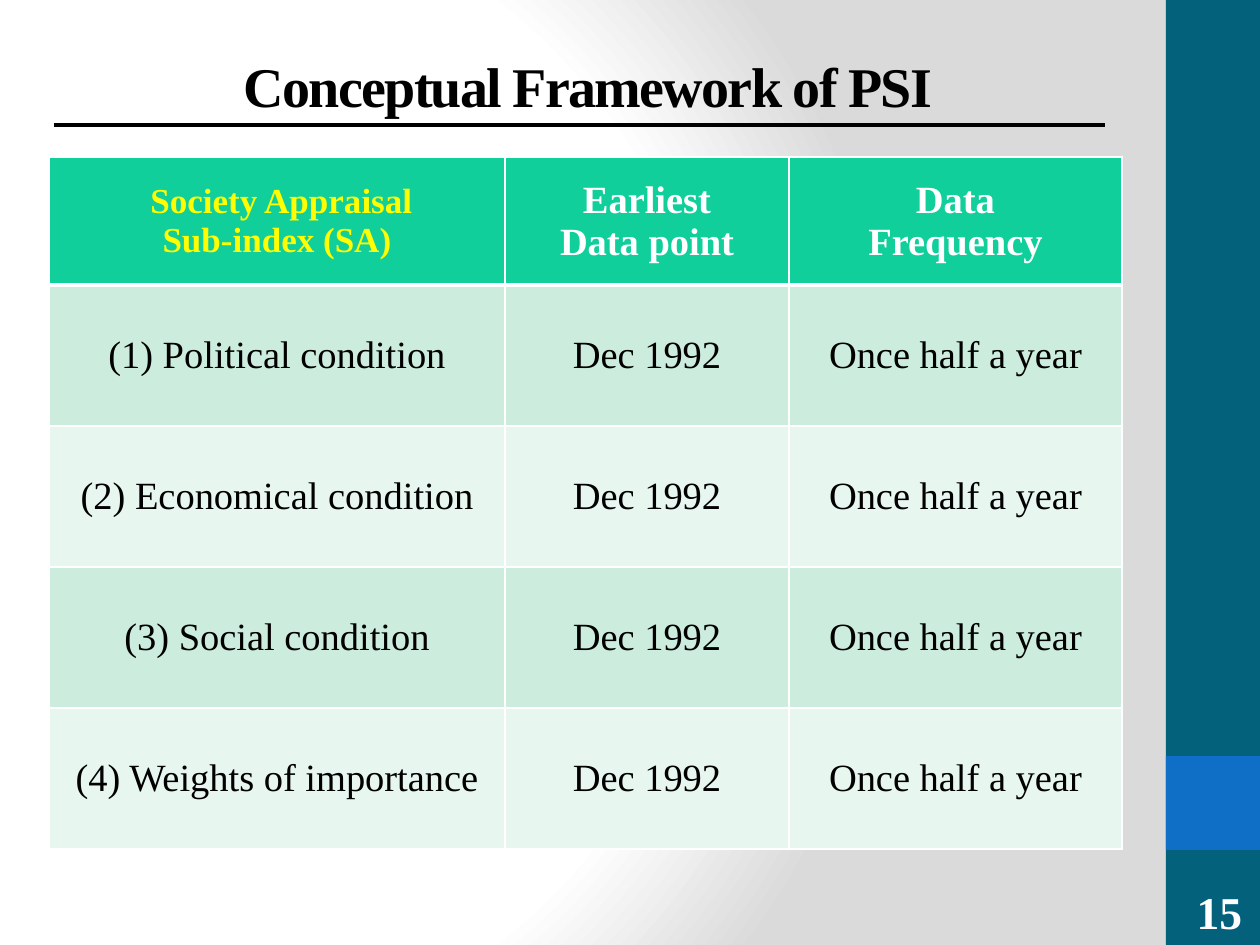
import pptx
import pptx.util
import pptx.dml.color
import pptx.enum.shapes
import pptx.enum.text
import pptx.oxml
import pptx.oxml.ns

RGB = pptx.dml.color.RGBColor
ALIGN = pptx.enum.text.PP_ALIGN
ANCHOR = pptx.enum.text.MSO_ANCHOR
WHITE = RGB(0xFF, 0xFF, 0xFF)
BLACK = RGB(0, 0, 0)
GREY = RGB(0xDA, 0xDA, 0xDA)
YELLOW = RGB(0xFF, 0xFF, 0)
TEAL = RGB(0x04, 0x61, 0x7B)
BLUE = RGB(0x0F, 0x6F, 0xC6)
GREEN = RGB(0x10, 0xCF, 0x9B)
BANDS = [RGB(0xCC, 0xED, 0xDE), RGB(0xE7, 0xF6, 0xEF)]

FONT = "Times New Roman"
SCALE = 914400 / 126
COLS = [456, 284, 333]
ROWS = [128] + [141] * 4
HEADS = [" Society Appraisal\nSub-index (SA)", "Earliest\nData point",
         "Data\nFrequency"]
ITEMS = ["Political condition", "Economical condition",
         "Social condition", "Weights of importance"]


def px(num):
    return round(num * SCALE)


def xml(text):
    """Parse an element whose a: prefix still needs its namespace."""
    space = " " + pptx.oxml.ns.nsdecls("a")
    cut = min(i for i in (text.find(" "), text.find(">"), text.find("/>"))
              if i > 0)
    return pptx.oxml.parse_xml(text[:cut] + space + text[cut:])


def style(obj, vals):
    for name, val in vals.items():
        setattr(obj, name, val)


def write(frame, text, size, color, bold=True):
    """Fill a text frame with centred paragraphs, one for each line."""
    frame.text = text
    for para in frame.paragraphs:
        para.alignment = ALIGN.CENTER
        for run in para.runs:
            style(run.font, {"name": FONT, "size": pptx.util.Pt(size),
                             "bold": bold})
            run.font.color.rgb = color


def paint(slide):
    """Give the slide its round white to grey backdrop."""
    slide.background.fill.solid()
    back = slide.element.find(".//" + pptx.oxml.ns.qn("p:bgPr"))
    stops = "".join(
        f'<a:gs pos="{pos * 1000}"><a:srgbClr val="{color}"/></a:gs>'
        for pos, color in [(0, WHITE), (75, WHITE), (100, GREY)])
    grad = xml(
        f'<a:gradFill rotWithShape="1"><a:gsLst>{stops}</a:gsLst>'
        '<a:path path="circle"><a:fillToRect l="20000" t="50000" '
        'r="100000" b="50000"/></a:path></a:gradFill>')
    back.replace(back[0], grad)


def block(slide, box, color):
    shape = slide.shapes.add_shape(
        pptx.enum.shapes.MSO_SHAPE.RECTANGLE, *map(px, box))
    shape.shadow.inherit = False
    shape.fill.solid()
    shape.fill.fore_color.rgb = color
    shape.line.fill.background()


def label(slide, box, text):
    frame = slide.shapes.add_textbox(*map(px, box)).text_frame
    style(frame, {"word_wrap": True, "vertical_anchor": ANCHOR.BOTTOM})
    write(frame, text, 26, WHITE)


def head(slide, box, text):
    title = slide.shapes.title
    style(title, dict(zip(("left", "top", "width", "height"), map(px, box))))
    frame = title.text_frame
    style(frame, {"vertical_anchor": ANCHOR.TOP, "margin_top": px(14),
                  "auto_size": pptx.enum.text.MSO_AUTO_SIZE.NONE})
    write(frame, text, 32, BLACK)
    for run in frame.paragraphs[0].runs:
        run.font._element.set("spc", "-100")


def rule(slide, ends):
    line = slide.shapes.add_connector(
        pptx.enum.shapes.MSO_CONNECTOR.STRAIGHT, *map(px, ends))
    line.line.color.rgb = BLACK
    line.line.width = pptx.util.Pt(2.25)
    line.element.spPr.append(xml("<a:effectLst/>"))


def border(cell, widths):
    """Draw white edges; widths are points for left, right, top, bottom."""
    props = cell._tc.get_or_add_tcPr()
    for i, (side, wide) in enumerate(zip("LRTB", widths)):
        props.insert(i, xml(
            f'<a:ln{side} w="{wide * 12700}"><a:solidFill>'
            f'<a:srgbClr val="{WHITE}"/></a:solidFill></a:ln{side}>'))


def grid(slide, left, top):
    table = slide.shapes.add_table(
        len(ROWS), len(COLS), px(left), px(top),
        px(sum(COLS)), px(sum(ROWS))).table
    for col, wide in zip(table.columns, COLS):
        col.width = px(wide)
    for row, high in zip(table.rows, ROWS):
        row.height = px(high)
    data = [HEADS] + [[f"({n}) {item}", "Dec 1992", "Once half a year"]
                      for n, item in enumerate(ITEMS, 1)]
    for r, texts in enumerate(data):
        for c, text in enumerate(texts):
            cell = table.cell(r, c)
            side, edge = (px(13), px(6)) if c == 0 else (px(1), px(1))
            style(cell, {"vertical_anchor": ANCHOR.MIDDLE,
                         "margin_left": side, "margin_right": side,
                         "margin_top": edge,
                         "margin_bottom": edge if c == 0 else 0})
            cell.fill.solid()
            cell.fill.fore_color.rgb = BANDS[(r - 1) % 2] if r else GREEN
            border(cell, (1, 1, 3 if r == 1 else 1, 1 if r else 3))
            if r:
                write(cell.text_frame, text, 22, BLACK, False)
            elif c:
                write(cell.text_frame, text, 22, WHITE)
            else:
                write(cell.text_frame, text, 20, YELLOW)


def main():
    deck = pptx.Presentation()
    deck.slide_width, deck.slide_height = px(1260), px(945)
    slide = deck.slides.add_slide(deck.slide_layouts[5])
    paint(slide)
    block(slide, (1166, 0, 94, 945), TEAL)
    block(slide, (1166, 756, 94, 94), BLUE)
    label(slide, (1179, 878, 81, 67), "15")
    rule(slide, (54, 125, 1105, 125))
    head(slide, (63, 38, 1050, 71), "Conceptual Framework of PSI")
    grid(slide, 49, 157)
    deck.save("out.pptx")


if __name__ == "__main__":
    main()
